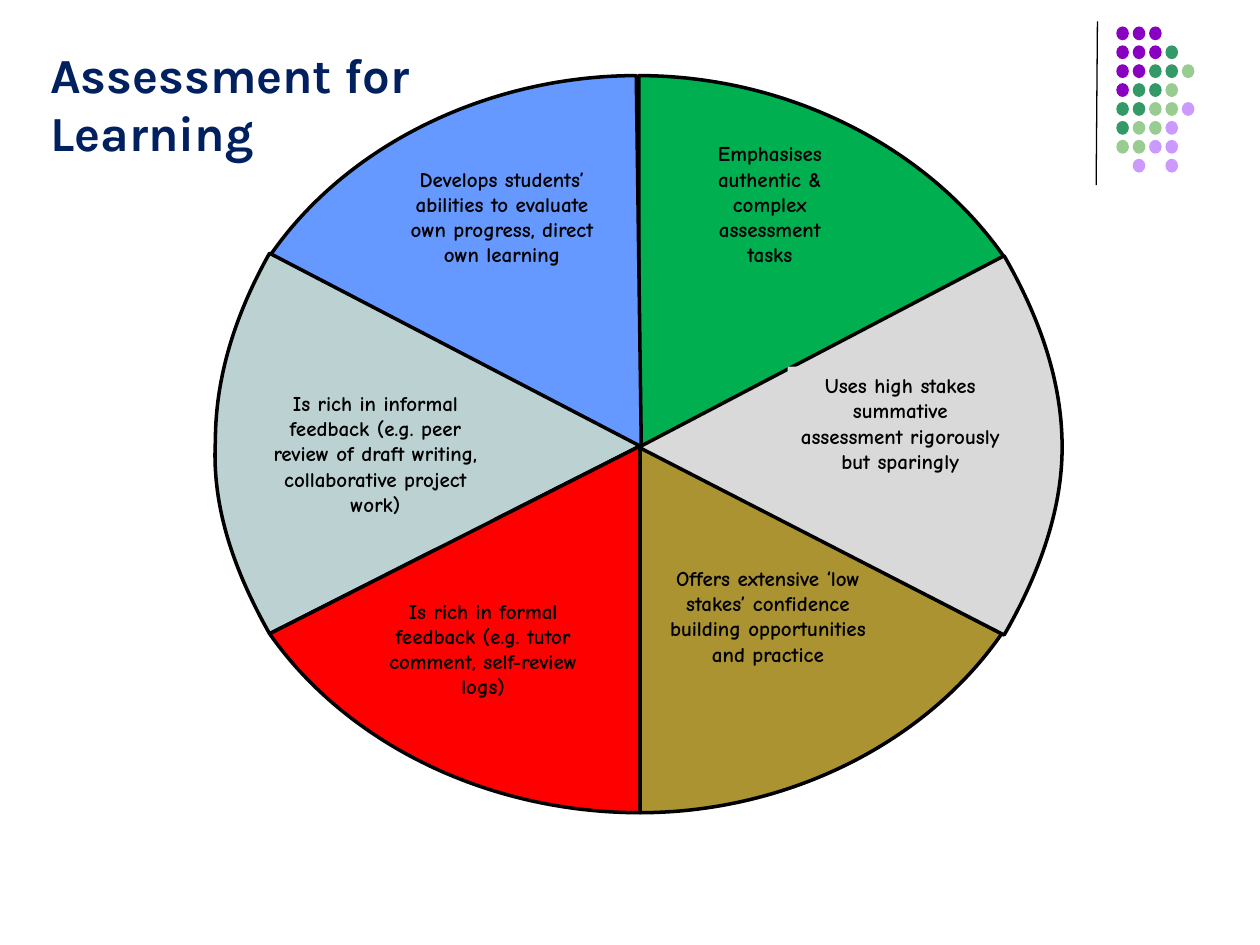
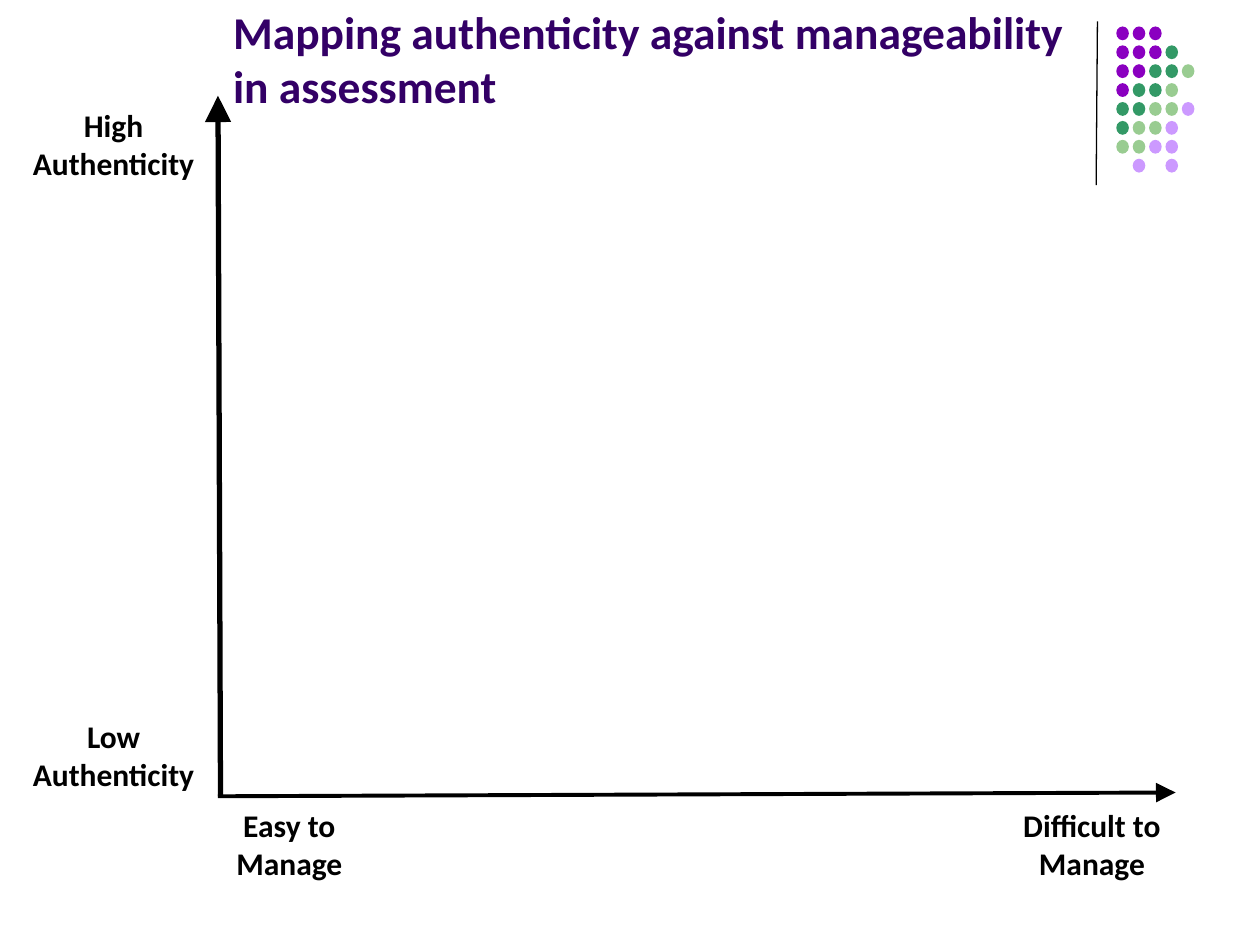
import lxml.etree
import pptx
import pptx.dml.color
import pptx.enum.shapes
import pptx.enum.text
import pptx.oxml.ns
import pptx.util

Inches = pptx.util.Inches
qn = pptx.oxml.ns.qn

BLACK = "000000"
DOT_COLOURS = {"P": "8A00C0", "G": "339966", "L": "99CC91", "V": "CC99FF"}
DOT_ROWS = ["PPP", "PPPG", "PPGGL", "PGGL", "GGLLV", "GLLV", "LLVV", " V V"]
DOT_ORIGIN, DOT_PITCH, DOT_SIZE = (8.86, 0.21), (0.13, 0.15), (0.1, 0.11)
DIVIDER = ((8.71, 0.17), (8.7, 1.47))

# Each rim is a start point followed by groups of two control points and an end point.
WEDGES = [
    {"text": "Emphasises authentic & complex assessment tasks",
     "fill": "00B050", "hub": (5.07, 3.58), "box": (5.44, 1.07, 1.34, 1.1), "filled_box": True,
     "rim": [(7.97, 2.04), (7.35, 1.15), (6.23, 0.6), (5.07, 0.6)]},
    {"text": "Develops students’ abilities to evaluate own progress, direct own learning",
     "fill": "6699FF", "hub": (5.09, 3.55), "box": (3.1, 1.27, 1.77, 1.1),
     "rim": [(5.05, 0.6), (3.89, 0.6), (2.76, 1.14), (2.15, 2.02)]},
    {"text": "Is rich in informal feedback (e.g. peer review of draft writing, "
             "collaborative project work)",
     "fill": "BCD2D2", "hub": (5.08, 3.54), "box": (2.04, 3.05, 1.88, 1.3), "filled_box": True,
     "rim": [(2.14, 2.01), (1.87, 2.49), (1.71, 2.99), (1.71, 3.5),
             (1.68, 4.04), (1.87, 4.55), (2.14, 5.03)]},
    {"text": "Is rich in formal feedback (e.g. tutor comment, self-review logs)",
     "fill": "FF0000", "hub": (5.08, 3.54), "box": (2.8, 4.7, 2.07, 0.9), "side_margin": 0.2,
     "rim": [(2.14, 5.03), (2.76, 5.91), (3.88, 6.45), (5.08, 6.45)]},
    {"text": "Offers extensive ‘low stakes’ confidence building opportunities and practice",
     "fill": "AA9330", "hub": (5.08, 3.54), "box": (5.19, 4.44, 1.81, 1.1),
     "rim": [(5.08, 6.45), (6.23, 6.45), (7.34, 5.91), (7.95, 5.03)]},
    {"text": "Uses high stakes summative assessment rigorously but sparingly",
     "fill": "D9D9D9", "hub": (5.07, 3.55), "box": (6.25, 2.91, 1.79, 1.1), "filled_box": True,
     "rim": [(7.97, 5.04), (8.24, 4.57), (8.43, 4.06), (8.43, 3.55),
             (8.43, 3.01), (8.24, 2.5), (7.97, 2.03)]},
]

AXES = [((1.75, 6.32), (1.73, 0.76), 3), ((1.73, 6.32), (9.33, 6.29), 2.25)]
AXIS_LABELS = [
    (["High ", "Authenticity "], (0.11, 0.79, 1.64, 0.71)),
    (["Low ", "Authenticity "], (0.11, 5.64, 1.64, 0.71)),
    (["Easy to ", "Manage "], (1.51, 6.35, 1.63, 0.71)),
    (["Difficult to ", "Manage "], (7.88, 6.35, 1.63, 0.71)),
]


def rgb(colour):
    return pptx.dml.color.RGBColor.from_string(colour)


def inches(lengths):
    return [Inches(length) for length in lengths]


def fill_with(shape, colour):
    shape.fill.solid()
    shape.fill.fore_color.rgb = rgb(colour)


def write(shape, lines, font, size, colour, align):
    """Put one bold paragraph per line at the top of the shape."""
    frame = shape.text_frame
    frame.text = "\n".join(lines)
    frame.word_wrap = True
    frame.auto_size = pptx.enum.text.MSO_AUTO_SIZE.NONE
    frame.vertical_anchor = pptx.enum.text.MSO_ANCHOR.TOP
    for paragraph in frame.paragraphs:
        paragraph.alignment = align
        paragraph.font.name = font
        paragraph.font.size = pptx.util.Pt(size)
        paragraph.font.bold = True
        paragraph.font.color.rgb = rgb(colour)


def write_centred(shape, lines, font, size):
    write(shape, lines, font, size, BLACK, pptx.enum.text.PP_ALIGN.CENTER)


def add_titled_slide(prs, layout, title, box, font, size, colour):
    slide = prs.slides.add_slide(layout)
    heading = slide.shapes.title
    heading.left, heading.top, heading.width, heading.height = inches(box)
    write(heading, [title], font, size, colour, pptx.enum.text.PP_ALIGN.LEFT)
    return slide


def add_line(slide, start, end, width, arrow=False):
    line = slide.shapes.add_connector(
        pptx.enum.shapes.MSO_CONNECTOR.STRAIGHT, *inches(start + end))
    line.line.color.rgb = rgb(BLACK)
    line.line.width = pptx.util.Pt(width)
    if arrow:
        lxml.etree.SubElement(line.get_or_add_ln(), qn("a:tailEnd"),
                              {"type": "triangle", "w": "lg", "len": "lg"})
    lxml.etree.SubElement(line.element.spPr, qn("a:effectLst"))
    return line


def add_dot(slide, row, column, colour):
    left, top = (origin + step * pitch for origin, step, pitch
                 in zip(DOT_ORIGIN, (column, row), DOT_PITCH))
    dot = slide.shapes.add_shape(
        pptx.enum.shapes.MSO_SHAPE.OVAL, *inches((left, top) + DOT_SIZE))
    dot.shadow.inherit = False
    fill_with(dot, colour)
    dot.line.fill.background()
    return dot


def decorate_layout(layout, slide):
    """Draw the divider and dots on the slide, then move them to its layout."""
    for placeholder in list(layout.placeholders):
        if placeholder.placeholder_format.type != pptx.enum.shapes.PP_PLACEHOLDER.TITLE:
            placeholder.element.getparent().remove(placeholder.element)
    ornaments = [add_line(slide, *DIVIDER, 0.75)]
    for row, letters in enumerate(DOT_ROWS):
        for column, letter in enumerate(letters):
            if letter in DOT_COLOURS:
                ornaments.append(add_dot(slide, row, column, DOT_COLOURS[letter]))
    for ornament in ornaments:
        layout.shapes.element.append(ornament.element)


def curve_rim(sector, curve_count):
    """Turn each leading group of three line segments into one Bezier curve."""
    segments = list(sector.element.iter(qn("a:lnTo")))
    for first in range(0, 3 * curve_count, 3):
        curve = lxml.etree.Element(qn("a:cubicBezTo"))
        segments[first].addprevious(curve)
        for segment in segments[first:first + 3]:
            curve.append(segment[0])
            segment.getparent().remove(segment)


def add_wedge(slide, wedge):
    start, *rest = [inches(point) for point in wedge["rim"] + [wedge["hub"]]]
    outline = slide.shapes.build_freeform(*start)
    outline.add_line_segments(rest, close=True)
    sector = outline.convert_to_shape()
    curve_rim(sector, len(wedge["rim"]) // 3)
    sector.shadow.inherit = False
    fill_with(sector, wedge["fill"])
    sector.line.color.rgb = rgb(BLACK)
    sector.line.width = pptx.util.Pt(2)

    label = slide.shapes.add_textbox(*inches(wedge["box"]))
    if wedge.get("filled_box"):
        fill_with(label, wedge["fill"])
    write_centred(label, [wedge["text"]], "Comic Neue", 12)
    side_margin = Inches(wedge.get("side_margin", 0.1))
    label.text_frame.margin_left = label.text_frame.margin_right = side_margin


def main():
    prs = pptx.Presentation()
    prs.slide_width, prs.slide_height = inches((10, 7.5))
    layout = prs.slide_layouts[5]

    wheel = add_titled_slide(prs, layout, "Assessment for Learning",
                             (0.3, 0.3, 3.64, 1.03), "Karla", 28, "002060")
    decorate_layout(layout, wheel)
    for wedge in WEDGES:
        add_wedge(wheel, wedge)

    mapping = add_titled_slide(
        prs, layout, "Mapping authenticity against manageability in assessment",
        (1.75, -0.02, 7.06, 0.98), "Calibri", 26, "330066")
    for start, end, width in AXES:
        add_line(mapping, start, end, width, arrow=True)
    for lines, box in AXIS_LABELS:
        write_centred(mapping.shapes.add_textbox(*inches(box)), lines, "Calibri", 18)

    prs.save("out.pptx")


if __name__ == "__main__":
    main()
